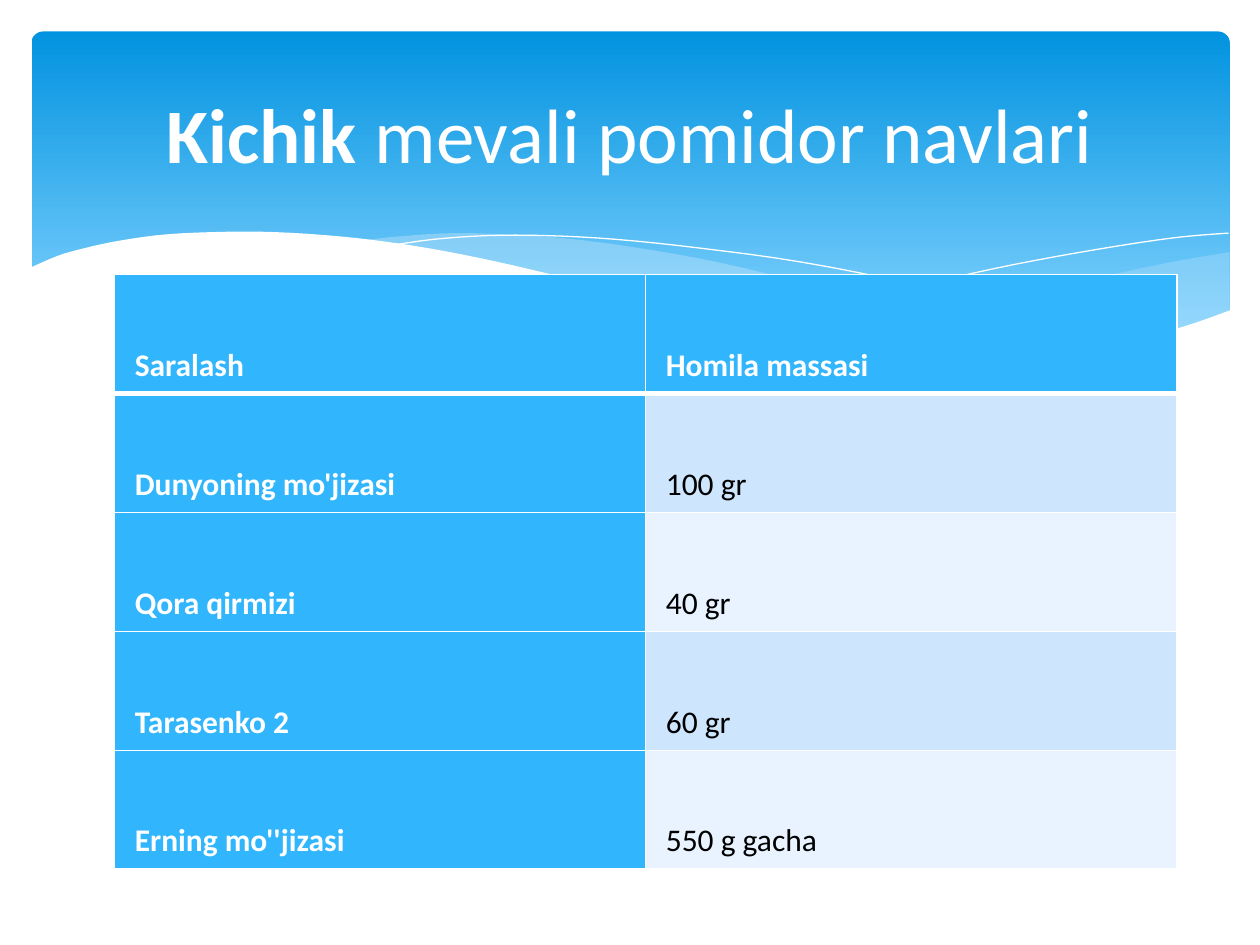
import pptx
import pptx.util
import pptx.dml.color
import pptx.enum.shapes
import pptx.enum.text
import pptx.oxml
import pptx.oxml.ns

C = {"white": "FFFFFF", "black": "000000", "top": "0293E0", "bottom": "83D3FE",
     "wave": "C6E7FC", "accent": "31B6FD", "odd": "CEE5FE", "even": "E8F3FF"}
UNIT = pptx.util.Inches(1)  # the slide is a grid of 10 columns by 7.5 rows

# Wave outlines, in columns and rows from the corner of the wave box
RIGHT_TOP = [(9.76, .16), (9.35, .23), (8.91, .32), (8.61, .39), (8.05, .53),
             (7.53, .64), (7.06, .73), (6.61, .81)]
RIGHT_BOTTOM = [(6.61, .81), (7.05, .87), (7.45, .91), (8.03, .94), (8.54, .92),
                (8.97, .86), (9.35, .78), (9.76, .63)]
MIDDLE_TOP = [(8.93, .89), (8.37, .81), (7.75, .7), (7.06, .56), (6.29, .38),
              (5.69, .24), (5.14, .14), (4.65, .07), (4.2, .03), (3.61, .01),
              (3.13, .04), (2.86, .07)]
MIDDLE_BOTTOM = [(2.86, .07), (3.42, .15), (4.04, .27), (4.49, .38), (5.3, .56),
                 (6.01, .71), (6.65, .82), (7.22, .9), (7.73, .93), (8.28, .94),
                 (8.67, .92), (8.93, .89)]
LEFT_LINE = [(3.09, .11), (3.44, .06), (3.87, .03), (4.33, .03), (4.89, .06),
             (5.56, .13), (6.36, .24), (7.27, .42), (8.31, .67), (9.07, .88)]
RIGHT_LINE = [(6.13, .73), (6.95, .51), (7.76, .32), (8.36, .2), (8.95, .1),
              (9.38, .04), (9.75, .01)]
FRONT_TOP = [(9.77, .62), (9.4, .75), (8.99, .85), (8.5, .91), (8.09, .93),
             (7.44, .9), (6.68, .81), (5.79, .66), (5.03, .49), (4.47, .36),
             (3.91, .23), (3.4, .13), (2.92, .06), (2.5, .02), (2.11, 0),
             (1.77, 0), (1.32, .02), (.95, .07), (.67, .13), (.46, .19), (.23, .29)]
FRONT_BASE = [(.23, 1.45), (9.77, 1.45)]

ROWS = [("Saralash", "Homila massasi"), ("Dunyoning mo'jizasi", "100 gr"),
        ("Qora qirmizi", "40 gr"), ("Tarasenko 2", "60 gr"),
        ("Erning mo''jizasi", "550 g gacha")]


def rgb(name):
    return pptx.dml.color.RGBColor.from_string(C[name])


def emu(box):
    return [round(v * UNIT) for v in box]


def smooth(points, steps=4):
    """Return points on a Catmull-Rom curve through the given points."""
    ends = [points[0], *points, points[-1]]
    curve = [points[0]]
    for a, b, c, d in zip(ends, ends[1:], ends[2:], ends[3:]):
        for t in (i / steps for i in range(1, steps + 1)):
            curve.append(tuple(
                (2 * q + (r - p) * t + (2 * p - 5 * q + 4 * r - s) * t ** 2
                 + (3 * q - p - 3 * r + s) * t ** 3) / 2
                for p, q, r, s in zip(a, b, c, d)))
    return curve


def add_outline(slide, box, points, fill=None, opacity=100):
    """Draw a filled closed outline, or an open white hairline without a fill."""
    pts = [emu((box[0] + x, box[1] + y)) for x, y in points]
    builder = slide.shapes.build_freeform(*pts[0])
    builder.add_line_segments(pts[1:], close=fill is not None)
    sp = builder.convert_to_shape()
    sp.shadow.inherit = False
    if fill is None:
        sp.fill.background()
        sp.line.color.rgb = rgb("white")
        sp.line.width = 0
        return
    sp.line.fill.background()
    sp.fill.solid()
    sp.fill.fore_color.rgb = rgb(fill)
    if opacity < 100:
        color = sp.fill._xPr.find(".//" + pptx.oxml.ns.qn("a:srgbClr"))
        color.append(pptx.oxml.parse_xml(
            f'<a:alpha {pptx.oxml.ns.nsdecls("a")} val="{opacity * 1000}"/>'))


def add_banner(slide, box):
    sp = slide.shapes.add_shape(pptx.enum.shapes.MSO_SHAPE.ROUNDED_RECTANGLE, *emu(box))
    sp.adjustments[0] = 0.034
    sp.shadow.inherit = False
    sp.line.fill.background()
    sp.fill.gradient()
    sp.fill.gradient_angle = 270
    for stop, position, name in zip(sp.fill.gradient_stops, (0, 0.9), ("top", "bottom")):
        stop.position = position
        stop.color.rgb = rgb(name)


def add_waves(slide, box):
    add_outline(slide, box, smooth(RIGHT_TOP) + smooth(RIGHT_BOTTOM), "wave", 29)
    add_outline(slide, box, smooth(MIDDLE_TOP) + smooth(MIDDLE_BOTTOM), "wave", 40)
    add_outline(slide, box, smooth(LEFT_LINE))
    add_outline(slide, box, smooth(RIGHT_LINE))
    add_outline(slide, box, smooth(FRONT_TOP) + FRONT_BASE, "white")


def set_borders(cell, widths):
    """Give the cell white borders, with widths in points by side."""
    tcPr = cell._tc.get_or_add_tcPr()
    for i, (side, width) in enumerate(widths.items()):
        tcPr.insert(i, pptx.oxml.parse_xml(
            f'<a:ln{side} {pptx.oxml.ns.nsdecls("a")} w="{pptx.util.Pt(width)}">'
            f'<a:solidFill><a:srgbClr val="{C["white"]}"/></a:solidFill></a:ln{side}>'))


def fill_cell(cell, text, row, col):
    heading = row == 0 or col == 0
    cell.fill.solid()
    cell.fill.fore_color.rgb = rgb("accent" if heading else "odd" if row % 2 else "even")
    cell.vertical_anchor = pptx.enum.text.MSO_ANCHOR.BOTTOM
    cell.margin_left = cell.margin_right = pptx.util.Inches(0.16)
    cell.margin_top = cell.margin_bottom = pptx.util.Inches(0.07)
    set_borders(cell, {"L": 1, "R": 1, "T": 3 if row == 1 else 1, "B": 3 if row == 0 else 1})
    cell.text = text
    p = cell.text_frame.paragraphs[0]
    p.line_spacing = 1.15
    p.font.name = "Calibri"
    p.font.size = pptx.util.Pt(18)
    p.font.bold = heading
    p.font.color.rgb = rgb("white" if heading else "black")


def add_variety_table(slide, box):
    table = slide.shapes.add_table(len(ROWS), len(ROWS[0]), *emu(box)).table
    for r, texts in enumerate(ROWS):
        for c, text in enumerate(texts):
            fill_cell(table.cell(r, c), text, r, c)


def place_title(slide, box):
    sp = slide.shapes.title
    slide.shapes._spTree.append(sp._element)  # in front of the banner
    sp.left, sp.top, sp.width, sp.height = emu(box)
    tf = sp.text_frame
    tf.word_wrap = True
    tf.vertical_anchor = pptx.enum.text.MSO_ANCHOR.MIDDLE
    p = tf.paragraphs[0]
    p.alignment = pptx.enum.text.PP_ALIGN.CENTER
    p.font.name = "Calibri"
    p.font.size = pptx.util.Pt(44)
    p.font.color.rgb = rgb("white")
    for text, bold in (("Kichik ", True), ("mevali pomidor navlari", False)):
        r = p.add_run()
        r.text = text
        r.font.bold = bold


def main():
    prs = pptx.Presentation()
    prs.slide_width, prs.slide_height = emu((10, 7.5))
    slide = prs.slides.add_slide(prs.slide_layouts[5])
    add_banner(slide, (0.25, 0.25, 9.51, 2.7))
    add_waves(slide, (0, 1.84))
    add_variety_table(slide, (0.91, 2.18, 8.43, 4.72))
    place_title(slide, (0.5, 0.37, 9, 1.37))
    prs.save("out.pptx")


if __name__ == "__main__":
    main()
